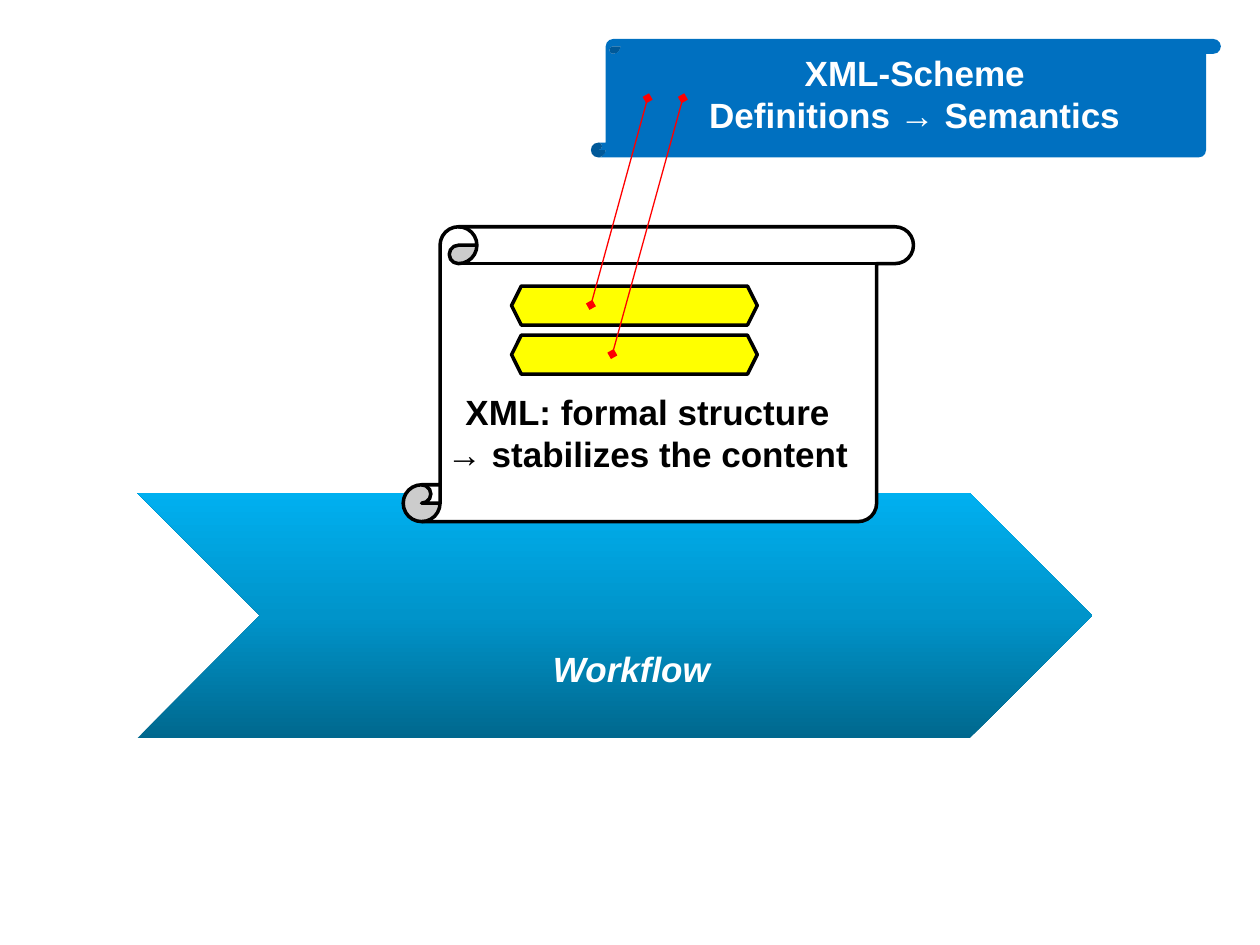
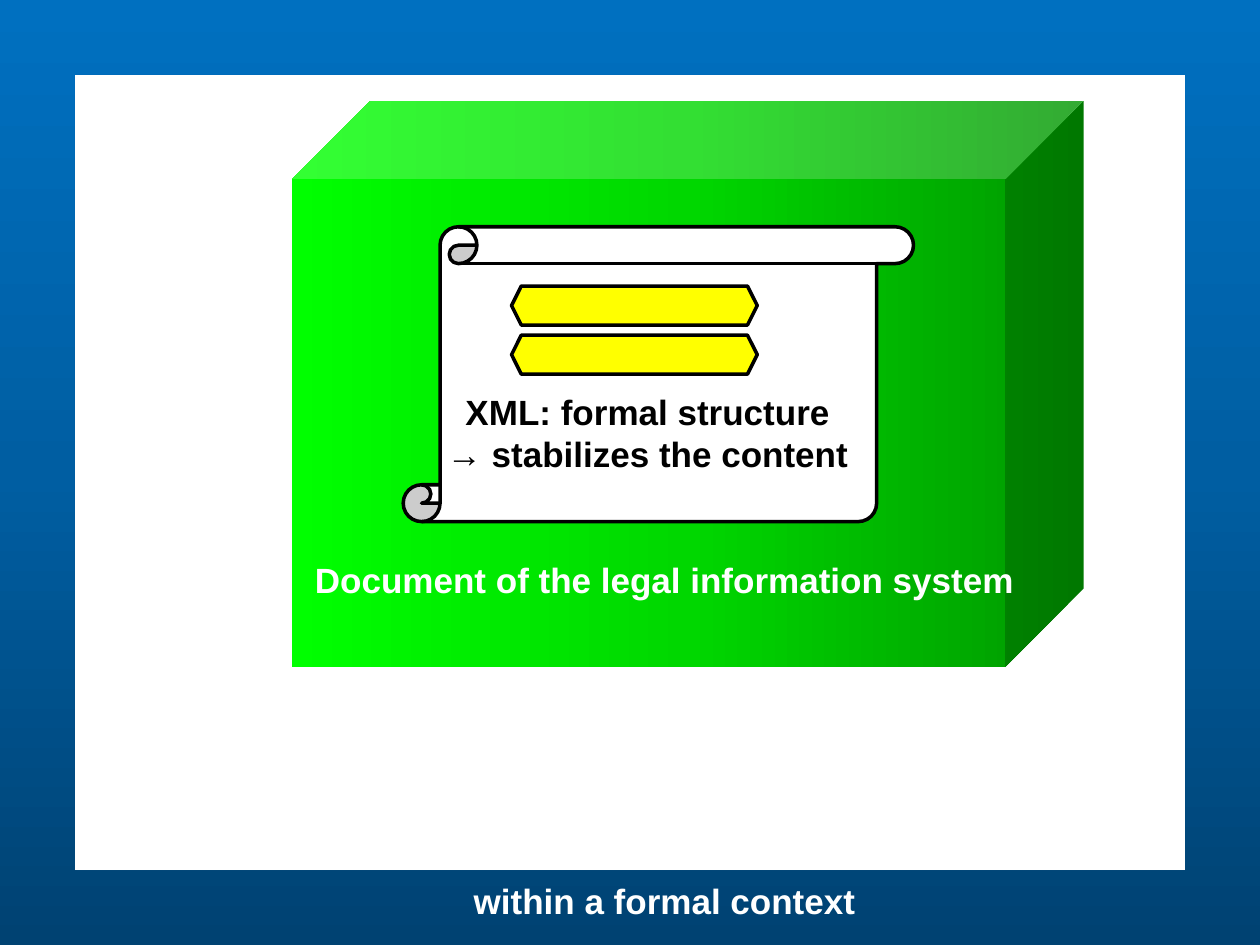
from copy import deepcopy

from lxml import etree
from pptx import Presentation
from pptx import util as u
from pptx.dml.color import RGBColor
from pptx.enum import shapes, text
from pptx.oxml.ns import qn

# Slide size and a grid of 100 columns by 75 rows of square cells
WIDTH, HEIGHT = u.Inches(10), u.Inches(7.5)
COLUMNS, ROWS = 100, 75
CELL = WIDTH / COLUMNS

FONT = "Arial"
BLACK = RGBColor(0x00, 0x00, 0x00)
WHITE = RGBColor(0xFF, 0xFF, 0xFF)
YELLOW = RGBColor(0xFF, 0xFF, 0x00)
RED = RGBColor(0xFF, 0x00, 0x00)
BLUE = RGBColor(0x00, 0x70, 0xC0)

# Gradients run from dark to light
WORKFLOW_BLUES = (RGBColor(0x00, 0x68, 0x8E), RGBColor(0x00, 0x94, 0xCA),
                  RGBColor(0x00, 0xB0, 0xF0))
DOCUMENT_GREENS = (RGBColor(0x00, 0x97, 0x00), RGBColor(0x00, 0xD7, 0x00),
                   RGBColor(0x00, 0xFF, 0x00))
CONTEXT_BLUES = (RGBColor(0x00, 0x42, 0x72), RGBColor(0x00, 0x5E, 0xA2), BLUE)
UPWARD, LEFTWARD = 90, 180

PRESET = shapes.MSO_SHAPE


def grid(*cells):
    """Turn grid cells into slide lengths."""
    return [u.Emu(round(cell * CELL)) for cell in cells]


def fill_gradient(fill, element, colors, angle):
    """Spread the colours evenly along the given angle."""
    fill.gradient()
    fill.gradient_angle = angle
    stop_list = element.spPr.find(qn("a:gradFill")).find(qn("a:gsLst"))
    while len(stop_list) < len(colors):
        stop_list.append(deepcopy(stop_list[0]))
    for index, (stop, color) in enumerate(zip(fill.gradient_stops, colors)):
        stop.position = index / (len(colors) - 1)
        stop.color.rgb = color


def add_figure(slide, preset, box, fill, outline=None, angle=UPWARD, adjust=None):
    """Add a preset shape; a tuple of colours as fill makes a gradient."""
    shape = slide.shapes.add_shape(preset, *grid(*box))
    shape.shadow.inherit = False
    if adjust is not None:
        shape.adjustments[0] = adjust
    if isinstance(fill, RGBColor):
        shape.fill.solid()
        shape.fill.fore_color.rgb = fill
    else:
        fill_gradient(shape.fill, shape.element, fill, angle)
    if outline is None:
        shape.line.fill.background()
    else:
        shape.line.color.rgb = outline
        shape.line.width = u.Pt(2)
    return shape


def add_label(slide, box, *lines, color=WHITE, italic=None,
              align=text.PP_ALIGN.CENTER):
    """Add a bold text box with one paragraph for each line."""
    frame = slide.shapes.add_textbox(*grid(*box)).text_frame
    frame.word_wrap = False
    frame.auto_size = text.MSO_AUTO_SIZE.SHAPE_TO_FIT_TEXT
    frame.text = "\n".join(lines)
    for paragraph in frame.paragraphs:
        paragraph.alignment = align
        font = paragraph.runs[0].font
        font.name, font.size, font.bold, font.italic = FONT, u.Pt(20), True, italic
        font.color.rgb = color


def add_link(slide, start, end):
    """Add a thin red line with a diamond at both ends."""
    link = slide.shapes.add_connector(
        shapes.MSO_CONNECTOR.STRAIGHT, *grid(*start, *end))
    link.line.color.rgb = RED
    link.line.width = u.Pt(0.75)
    line = link.line._get_or_add_ln()
    for end_name in ("a:headEnd", "a:tailEnd"):
        etree.SubElement(line, qn(end_name), type="diamond")
    etree.SubElement(link.element.spPr, qn("a:effectLst"))


def add_xml_document(slide):
    """Add the scroll with its two content fields, shared by both slides."""
    add_figure(slide, PRESET.VERTICAL_SCROLL, (32, 18, 40.5, 23.4), WHITE, BLACK)
    for field in range(2):
        add_figure(slide, PRESET.HEXAGON, (40.6, 22.7 + 3.9 * field, 19.5, 3.1),
                   YELLOW, BLACK)
    add_label(slide, (34.4, 30.5, 34, 7.7), "XML: formal structure",
              "→ stabilizes the content", color=BLACK)


def build_workflow_slide(slide):
    # Workflow arrow behind the document
    add_figure(slide, PRESET.CHEVRON, (10.9, 39.1, 75.8, 19.5), WORKFLOW_BLUES)
    add_label(slide, (42.9, 50.9, 14.6, 4.4), "Workflow", italic=True,
              align=text.PP_ALIGN.LEFT)
    add_xml_document(slide)

    # Scheme and its links to the content fields
    add_figure(slide, PRESET.VERTICAL_SCROLL, (46.9, 3.1, 50, 9.4), BLUE)
    add_label(slide, (55.2, 3.6, 34.8, 7.7), "XML-Scheme",
              "Definitions → Semantics")
    add_link(slide, (46.9, 24.2), (51.4, 7.8))
    add_link(slide, (48.6, 28.1), (54.2, 7.8))


def build_context_slide(slide):
    # Legal document around the XML document
    add_figure(slide, PRESET.CUBE, (23.2, 8, 62.8, 44.9), DOCUMENT_GREENS,
               angle=LEFTWARD, adjust=0.138)
    add_xml_document(slide)
    add_label(slide, (23.8, 43.8, 57.9, 4.4),
              "Document of the legal information system")

    # Formal context framing the whole slide
    add_figure(slide, PRESET.FRAME, (0, 0, COLUMNS, ROWS), CONTEXT_BLUES,
               adjust=0.079)
    add_label(slide, (36.5, 69.3, 32.5, 4.4), "within a formal context")


def main():
    presentation = Presentation()
    presentation.slide_width, presentation.slide_height = WIDTH, HEIGHT
    blank = presentation.slide_layouts[6]
    for build in (build_workflow_slide, build_context_slide):
        build(presentation.slides.add_slide(blank))
    presentation.save("out.pptx")


if __name__ == "__main__":
    main()
